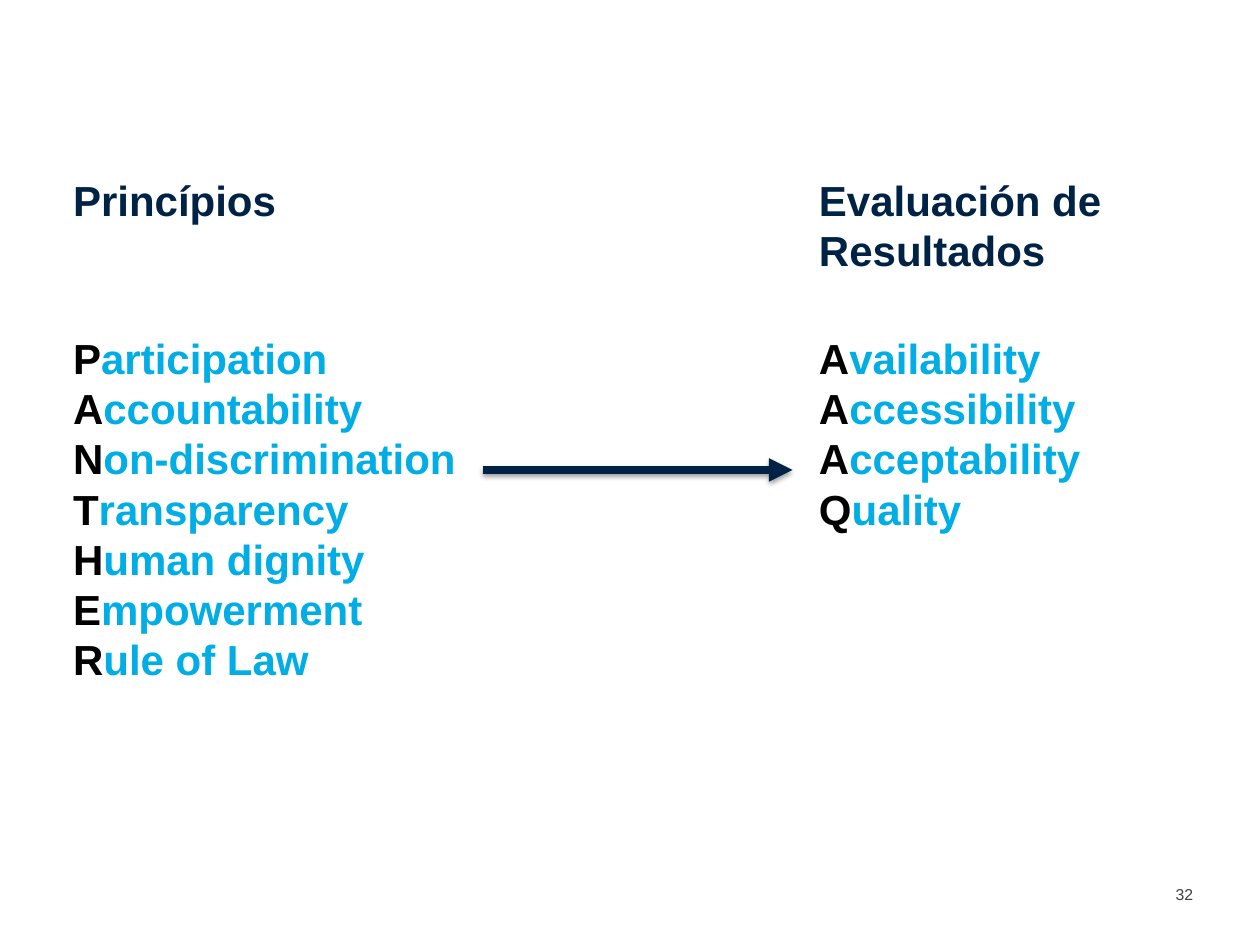
"""Build a slide linking the PANTHER principles to the AAAQ results."""
import pptx
import pptx.util
import pptx.dml.color
import pptx.enum.shapes
import pptx.enum.text
import pptx.oxml
import pptx.oxml.ns

Inches, Pt = pptx.util.Inches, pptx.util.Pt
NAVY, CYAN, BLACK, GREY = "002345", "00ADE4", "000000", "404040"
NO_STYLE = "{2D5ABB26-0587-4C30-8999-92F81FD0307C}"


def rgb(value):
    return pptx.dml.color.RGBColor.from_string(value)


def add_run(p, text, color, size=24, bold=True):
    r = p.add_run()
    r.text = text
    r.font.name = "Arial"
    r.font.size = Pt(size)
    r.font.bold = bold
    r.font.color.rgb = rgb(color)


prs = pptx.Presentation()
prs.slide_width, prs.slide_height = Inches(10), Inches(7.5)
s = prs.slides.add_slide(prs.slide_layouts[6])

sp = s.shapes.add_textbox(Inches(9.33), Inches(6.96), Inches(0.31), Inches(0.24))
tf = sp.text_frame
tf.word_wrap = True
tf.margin_left = tf.margin_right = tf.margin_bottom = 0
tf.margin_top = Inches(0.04)
tf.vertical_anchor = pptx.enum.text.MSO_ANCHOR.MIDDLE
add_run(tf.paragraphs[0], "32", GREY, 9, False)

frame = s.shapes.add_table(2, 3, Inches(0.54), Inches(1.39), Inches(8.93), Inches(5.2))
table = frame.table
table.first_row = table.horz_banding = False
table._tbl.tblPr.find(pptx.oxml.ns.qn("a:tableStyleId")).text = NO_STYLE
for column, width in zip(table.columns, (3.55, 2.37, 3.01)):
    column.width = Inches(width)
for row, height in zip(table.rows, (0.82, 4.38)):
    row.height = Inches(height)
for cell in table.iter_cells():
    cell.fill.background()
    cell.margin_left = cell.margin_right = Inches(0.04)
    cell.margin_top = cell.margin_bottom = 0

columns = {
    0: ("Princípios", ["Participation", "Accountability", "Non-discrimination",
                       "Transparency", "Human dignity", "Empowerment", "Rule of Law"]),
    2: ("Evaluación de Resultados", ["Availability", "Accessibility",
                                     "Acceptability", "Quality"]),
}
for col, (heading, words) in columns.items():
    p = table.cell(0, col).text_frame.paragraphs[0]
    p.line_spacing = 1.07
    add_run(p, heading, NAVY)
    cell = table.cell(1, col)
    cell.margin_top = Inches(0.4)
    tf = cell.text_frame
    for i, word in enumerate(words):
        p = tf.add_paragraph() if i else tf.paragraphs[0]
        p.line_spacing = 1.07
        add_run(p, word[0], BLACK)
        add_run(p, word[1:], CYAN)

arrow = s.shapes.add_connector(pptx.enum.shapes.MSO_CONNECTOR.STRAIGHT,
                               Inches(3.83), Inches(3.73), Inches(6.29), Inches(3.73))
arrow.line.color.rgb = rgb(NAVY)
arrow.line.width = Pt(4.5)
ns = pptx.oxml.ns.nsdecls("a")
arrow.line._ln.append(pptx.oxml.parse_xml(f'<a:tailEnd {ns} type="triangle"/>'))
arrow._element.spPr.append(pptx.oxml.parse_xml(
    f'<a:effectLst {ns}><a:outerShdw blurRad="{Pt(3.1)}" dist="{Pt(1.6)}" '
    f'dir="5400000" rotWithShape="0"><a:srgbClr val="{BLACK}">'
    '<a:alpha val="38000"/></a:srgbClr></a:outerShdw></a:effectLst>'))

prs.save("out.pptx")
